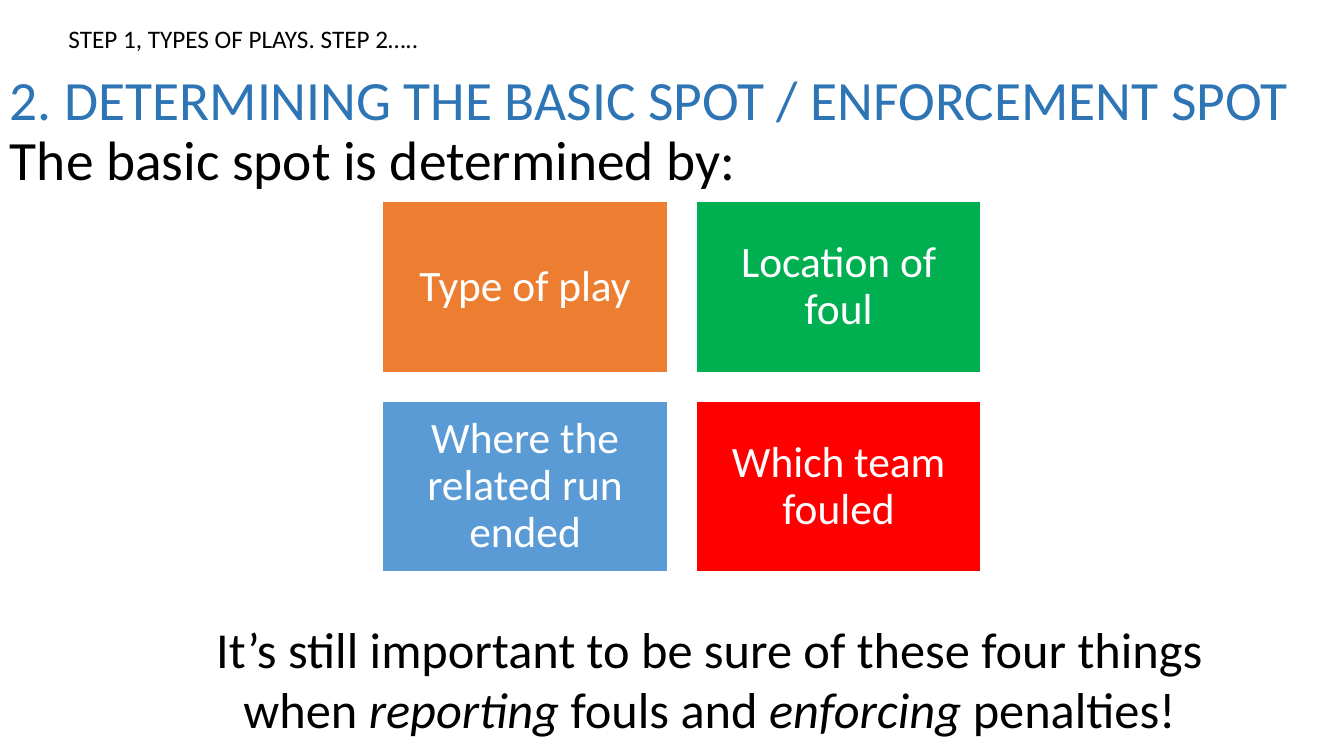
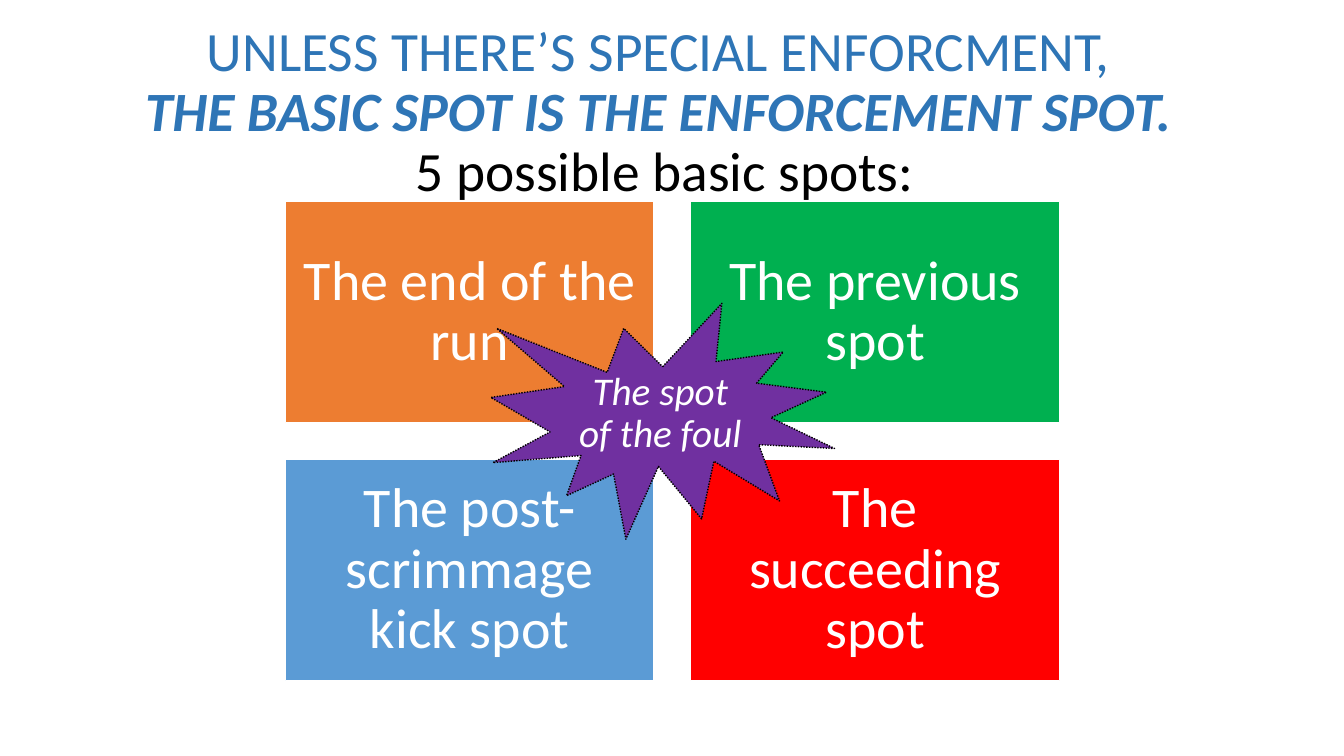
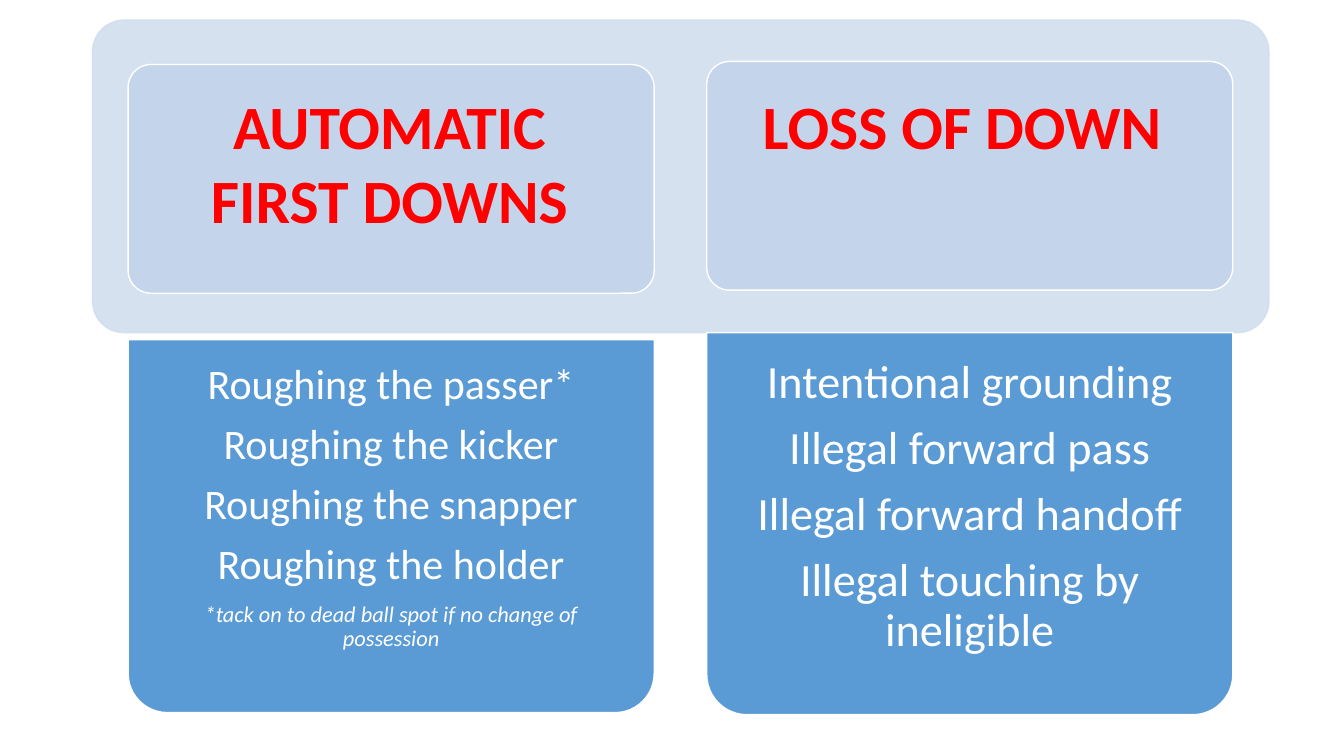
from lxml.etree import SubElement
from pptx import Presentation
from pptx.dml.color import RGBColor
from pptx.enum.dml import MSO_LINE
from pptx.enum.shapes import MSO_SHAPE
from pptx.enum.text import MSO_ANCHOR, PP_ALIGN
from pptx.oxml.ns import qn
from pptx.util import Pt

# Shared style
FONT = "Calibri"
BLACK, WHITE, RED, BLUE = "000000", "FFFFFF", "FF0000", "5B9BD5"
TITLE_BLUE, PURPLE, BAND, HEADER = "2E75B6", "7030A0", "D2DEEF", "C4D5EB"
TILE_COLORS = ["ED7D31", "00B050", BLUE, RED]
TITLE = {"size": 39.6, "color": TITLE_BLUE}
ITALIC = {"italic": True}
CENTER, LEFT = PP_ALIGN.CENTER, PP_ALIGN.LEFT
MIDDLE, TOP = MSO_ANCHOR.MIDDLE, MSO_ANCHOR.TOP

# Content: a paragraph is a list of (text, format) runs; "\n" ends a line
SPOT_TITLE = [
    ("2. DETERMINING THE BASIC SPOT / ENFORCEMENT SPOT\n", TITLE),
    ("The basic spot is determined by:", {**TITLE, "color": BLACK}),
]
FACTORS = ["Type of play", "Location of foul",
           "Where the related run ended", "Which team fouled"]
REMINDER = [
    ("It’s still important to be sure of these four things when ", {}),
    ("reporting", ITALIC),
    (" fouls and ", {}),
    ("enforcing", ITALIC),
    (" penalties!", {}),
]
STEP_NOTE = [("STEP 1, TYPES OF PLAYS. STEP 2…..", {})]

ENFORCEMENT_TITLE = [
    ("UNLESS THERE’S SPECIAL ENFORCMENT, \n", TITLE),
    ("THE BASIC SPOT IS THE ENFORCEMENT SPOT. \n",
     {**TITLE, "bold": True, "italic": True}),
    ("5 possible basic spots:", {**TITLE, "color": BLACK}),
]
BASIC_SPOTS = ["The end of the run", "The previous spot",
               "The post-scrimmage kick spot", "The succeeding spot"]
FIFTH_SPOT = [("The spot of the foul", ITALIC)]

PENALTY_COLUMNS = [
    {"heading": "AUTOMATIC FIRST DOWNS", "left": 91.5, "heading_left": 111.6,
     "header_top": 46.1, "top": 242.6, "height": 266.4,
     "size": 30, "inset": 16.6,
     "items": ["Roughing the passer*", "Roughing the kicker",
               "Roughing the snapper", "Roughing the holder"],
     "footnote": "*tack on to dead ball spot if no change of possession"},
    {"heading": "LOSS OF DOWN", "left": 504.8, "heading_left": 520.6,
     "header_top": 43.9, "top": 237.6, "height": 272.9,
     "size": 33, "inset": 18.7,
     "items": ["Intentional grounding", "Illegal forward pass",
               "Illegal forward handoff", "Illegal touching by ineligible"],
     "footnote": None},
]


def rgb(code):
    return RGBColor.from_string(code)


def write(box, paragraphs, size, color=BLACK, align=CENTER, anchor=TOP,
          spacing=1.0, after=0.0, insets=(7.2, 3.6)):
    """Fill a box with paragraphs; after is a share of the text size."""
    frame = box.text_frame
    across, down = (Pt(inset) for inset in insets)
    settings = {"word_wrap": True, "vertical_anchor": anchor,
                "margin_left": across, "margin_right": across,
                "margin_top": down, "margin_bottom": down}
    for name, value in settings.items():
        setattr(frame, name, value)
    for index, runs in enumerate(paragraphs):
        para = frame.add_paragraph() if index else frame.paragraphs[0]
        para.alignment, para.line_spacing = align, spacing
        para.space_after = Pt(round(after * size, 2))
        for text, style in runs:
            span = para.add_run()
            span.text = text.rstrip("\n")
            looks = {"name": FONT, "size": size, "color": color, **style}
            span.font.color.rgb = rgb(looks.pop("color"))
            looks["size"] = Pt(looks["size"])
            for name, value in looks.items():
                setattr(span.font, name, value)
            if text.endswith("\n"):
                para.add_line_break()


def add_text(page, place, paragraphs, size, **options):
    box = page.shapes.add_textbox(*map(Pt, place))
    write(box, paragraphs, size, **options)


def add_title(page, place, runs, align):
    add_text(page, place, [runs], TITLE["size"], align=align,
             anchor=MIDDLE, spacing=0.9)


def add_box(page, kind, place, fill, line=WHITE, adjust=()):
    box = page.shapes.add_shape(kind, *map(Pt, place))
    box.shadow.inherit = False
    box.fill.solid()
    box.fill.fore_color.rgb = rgb(fill)
    box.line.color.rgb = rgb(line)
    box.line.width = Pt(1)
    for index, value in enumerate(adjust):
        box.adjustments[index] = value
    return box


def add_tiles(page, labels, left, top, width, size, inset):
    """Two-by-two tiles: height is 60 % and gap 10 % of the width."""
    height, gap = width * 0.6, width * 0.1
    for index, (label, color) in enumerate(zip(labels, TILE_COLORS)):
        row, column = divmod(index, 2)
        place = (left + column * (width + gap), top + row * (height + gap),
                 width, height)
        tile = add_box(page, MSO_SHAPE.RECTANGLE, place, color)
        write(tile, [[(label, {})]], size, color=WHITE, anchor=MIDDLE,
              spacing=0.9, insets=(inset, inset))


def add_penalty_column(page, column):
    width, side = 375.8, 8.3
    left, top, height = column["left"], column["top"], column["height"]
    add_box(page, MSO_SHAPE.ROUNDED_RECTANGLE,
            (left, column["header_top"], width, 163.4), HEADER, adjust=[0.1])
    panel = add_box(page, MSO_SHAPE.ROUND_2_SAME_RECTANGLE,
                    (left, top, width, height), BLUE, adjust=[0.105, 0])
    panel.rotation = 180
    # Penalty list, with its footnote
    items = [[(item, {})] for item in column["items"]]
    if column["footnote"]:
        items.append([(column["footnote"], {"size": 16, **ITALIC})])
    add_text(page, (left + side, top, width - 2 * side, height - side), items,
             column["size"], color=WHITE, spacing=0.9, after=0.35,
             insets=(column["inset"], column["inset"]))
    add_text(page, (column["heading_left"], 59, 333.4, 113.8),
             [[(column["heading"], {"bold": True})]], 44, color=RED)


def build_factors(page):
    add_title(page, (0, 42.5, 946.8, 104.4), SPOT_TITLE, LEFT)
    add_tiles(page, FACTORS, 273.2, 144, 203.6, 31, 9.4)
    add_text(page, (146.9, 437.8, 720, 94.3), [REMINDER], 36)
    add_text(page, (41.8, 13, 811.4, 28.8), [STEP_NOTE], 18, align=LEFT)


def build_basic_spots(page):
    add_tiles(page, BASIC_SPOTS, 203.8, 144, 263.3, 40, 12.2)
    # Burst in the middle of the tiles
    burst = add_box(page, MSO_SHAPE.EXPLOSION1, (350.6, 216.7, 245.5, 168.5),
                    PURPLE, line=BLACK)
    burst.line.dash_style = MSO_LINE.ROUND_DOT
    add_text(page, (403.2, 265.7, 136.8, 59.8), [FIFTH_SPOT], 28, color=WHITE,
             anchor=MIDDLE, spacing=0.9, insets=(8.6, 8.6))
    add_title(page, (14.4, 28.8, 920.9, 104.4), ENFORCEMENT_TITLE, CENTER)


def build_penalties(page):
    band = add_box(page, MSO_SHAPE.ROUNDED_RECTANGLE, (66.2, 14.4, 840.2, 223.2),
                   BAND, line=BAND, adjust=[0.1])
    for color in band.element.spPr.iter(qn("a:srgbClr")):
        SubElement(color, qn("a:alpha"), val="90000")
    for column in PENALTY_COLUMNS:
        add_penalty_column(page, column)


def main():
    deck = Presentation()
    deck.slide_width, deck.slide_height = Pt(960), Pt(540)
    for build in (build_factors, build_basic_spots, build_penalties):
        build(deck.slides.add_slide(deck.slide_layouts[6]))
    deck.save("out.pptx")


if __name__ == "__main__":
    main()
